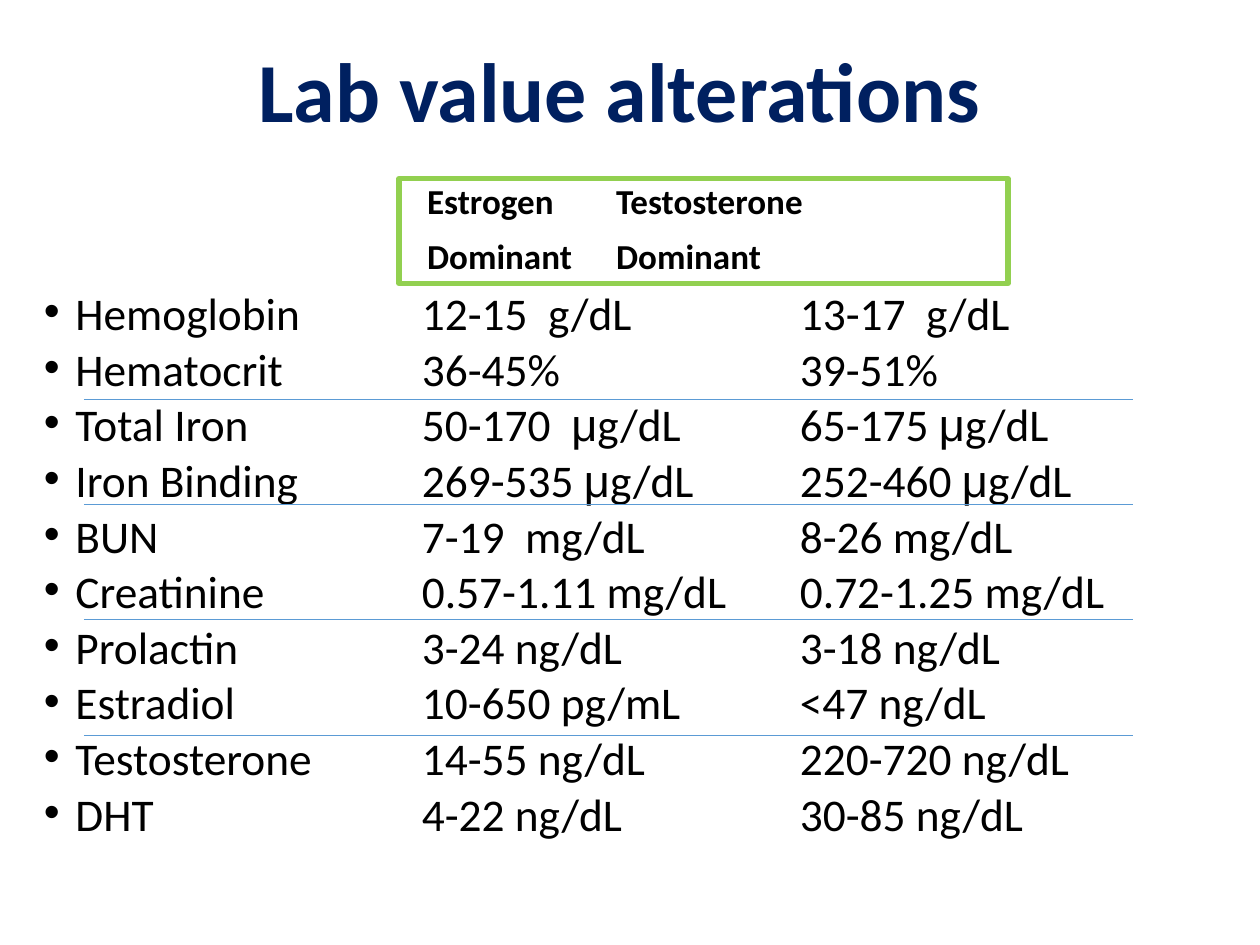
from lxml import etree
from pptx import Presentation
from pptx.dml.color import RGBColor
from pptx.enum.shapes import MSO_CONNECTOR as Connector, MSO_SHAPE as Shape
from pptx.enum.text import MSO_ANCHOR as Anchor, PP_ALIGN as Align
from pptx.oxml.ns import qn
from pptx.util import Pt

NAVY = RGBColor(0x00, 0x20, 0x60)
BLACK = RGBColor(0x00, 0x00, 0x00)
GREEN = RGBColor(0x92, 0xD0, 0x50)
BLUE = RGBColor(0x5B, 0x9B, 0xD5)

COLUMN = 216  # distance between the text columns

LAB_VALUES = [
    ("Hemoglobin", "12-15  g/dL", "13-17  g/dL"),
    ("Hematocrit", "36-45%", "39-51%"),
    ("Total Iron", "50-170  μg/dL", "65-175 μg/dL"),
    ("Iron Binding", "269-535 μg/dL", "252-460 μg/dL"),
    ("BUN", "7-19  mg/dL", "8-26 mg/dL"),
    ("Creatinine", "0.57-1.11 mg/dL", "0.72-1.25 mg/dL"),
    ("Prolactin", "3-24 ng/dL", "3-18 ng/dL"),
    ("Estradiol", "10-650 pg/mL", "<47 ng/dL"),
    ("Testosterone", "14-55 ng/dL", "220-720 ng/dL"),
    ("DHT", "4-22 ng/dL", "30-85 ng/dL"),
]


def add_span(para, text, size, color, bold=False, font="Calibri"):
    span = para.add_run()
    span.text = text
    span.font.name = font
    span.font.size = Pt(size)
    span.font.bold = bold
    span.font.color.rgb = color


def set_layout(para, spacing, left, indent, tabs, bullet=None):
    para.alignment = Align.LEFT
    para.line_spacing = spacing
    para.space_before = Pt(10)
    props = para._p.get_or_add_pPr()
    props.set("marL", str(Pt(left)))
    props.set("indent", str(Pt(indent)))
    if bullet:
        etree.SubElement(props, qn("a:buFont"), typeface="Arial")
        etree.SubElement(props, qn("a:buChar"), char=bullet)
    tab_list = etree.SubElement(props, qn("a:tabLst"))
    for tab in tabs:
        etree.SubElement(tab_list, qn("a:tab"), pos=str(Pt(tab)), algn="l")


deck = Presentation()
deck.slide_width, deck.slide_height = Pt(720), Pt(540)
page = deck.slides.add_slide(deck.slide_layouts[6])

# Title
title = page.shapes.add_textbox(Pt(60.5), Pt(23.75), Pt(587), Pt(61))
title.text_frame.word_wrap = True
title.text_frame.vertical_anchor = Anchor.MIDDLE
para = title.text_frame.paragraphs[0]
para.alignment = Align.CENTER
para.line_spacing = 0.9
add_span(para, "Lab value alterations", 48, NAVY, bold=True)

# Framed column headings
header = page.shapes.add_shape(Shape.RECTANGLE, Pt(228), Pt(102), Pt(348), Pt(60))
header.shadow.inherit = False
header.fill.background()
header.line.color.rgb = GREEN
header.line.width = Pt(3)
frame = header.text_frame
frame.word_wrap = True
frame.vertical_anchor = Anchor.BOTTOM
for index, words in enumerate([("Estrogen", "Testosterone"), ("Dominant", "Dominant")]):
    para = frame.add_paragraph() if index else frame.paragraphs[0]
    set_layout(para, 0.9, 9, 0, [COLUMN])
    add_span(para, "\t".join(words), 20, BLACK, bold=True)

# Lab values, aligned on tab stops
values = page.shapes.add_textbox(Pt(18), Pt(168), Pt(672), Pt(330))
frame = values.text_frame
frame.word_wrap = True
for index, row in enumerate(LAB_VALUES):
    para = frame.add_paragraph() if index else frame.paragraphs[0]
    set_layout(para, 0.7, 18, -18, [COLUMN, 2 * COLUMN], bullet="•")
    for part_index, part in enumerate("\t".join(row).split("μ")):
        if part_index:
            add_span(para, "μ", 25.9, BLACK, font="Arial")
        add_span(para, part, 25.9, BLACK)

# Rules between the groups of values
for y in (228, 288, 354, 420):
    rule = page.shapes.add_connector(Connector.STRAIGHT, Pt(48), Pt(y), Pt(647.5), Pt(y))
    rule.line.color.rgb = BLUE
    rule.line.width = Pt(0.5)
    etree.SubElement(rule._element.spPr, qn("a:effectLst"))

deck.save("out.pptx")
